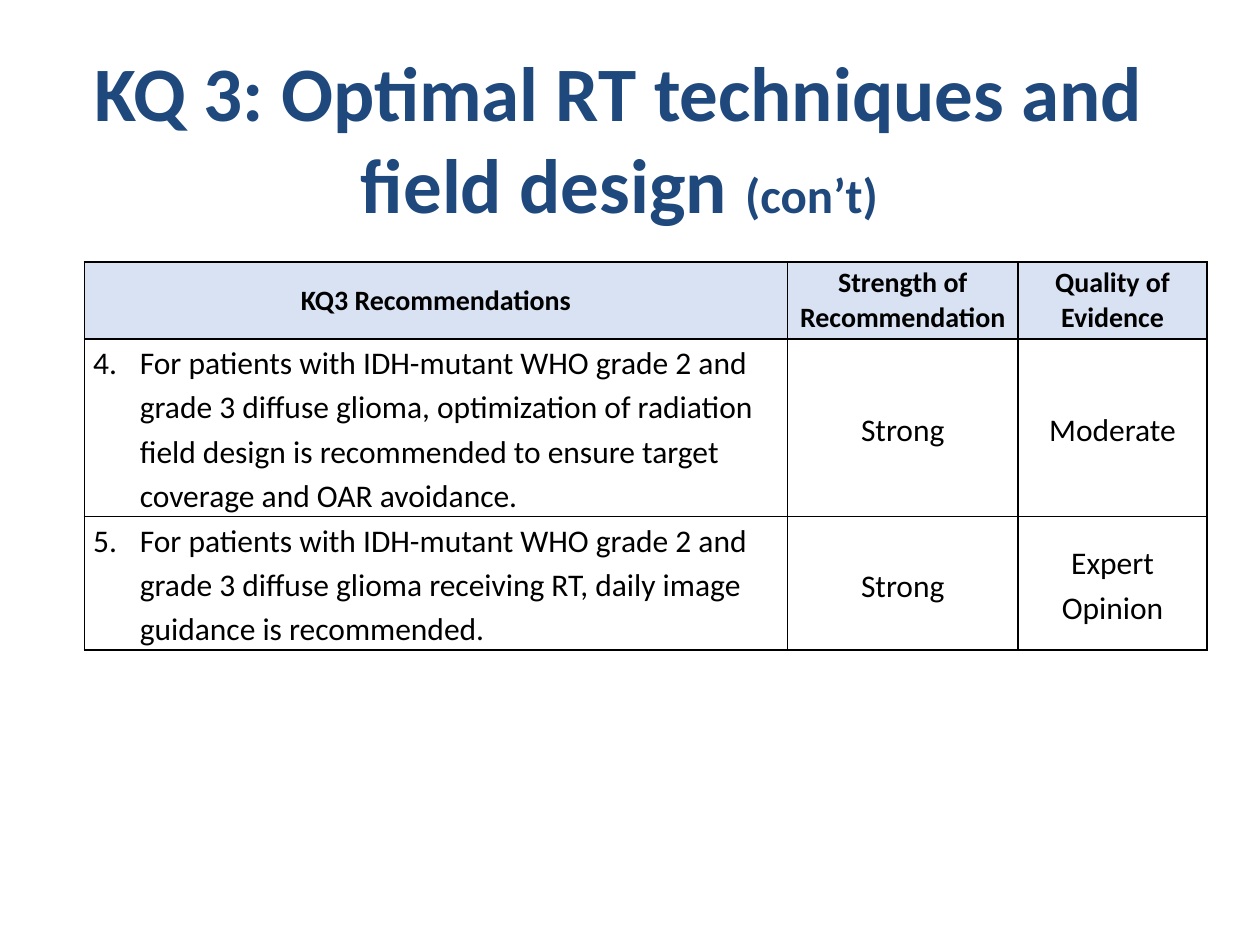
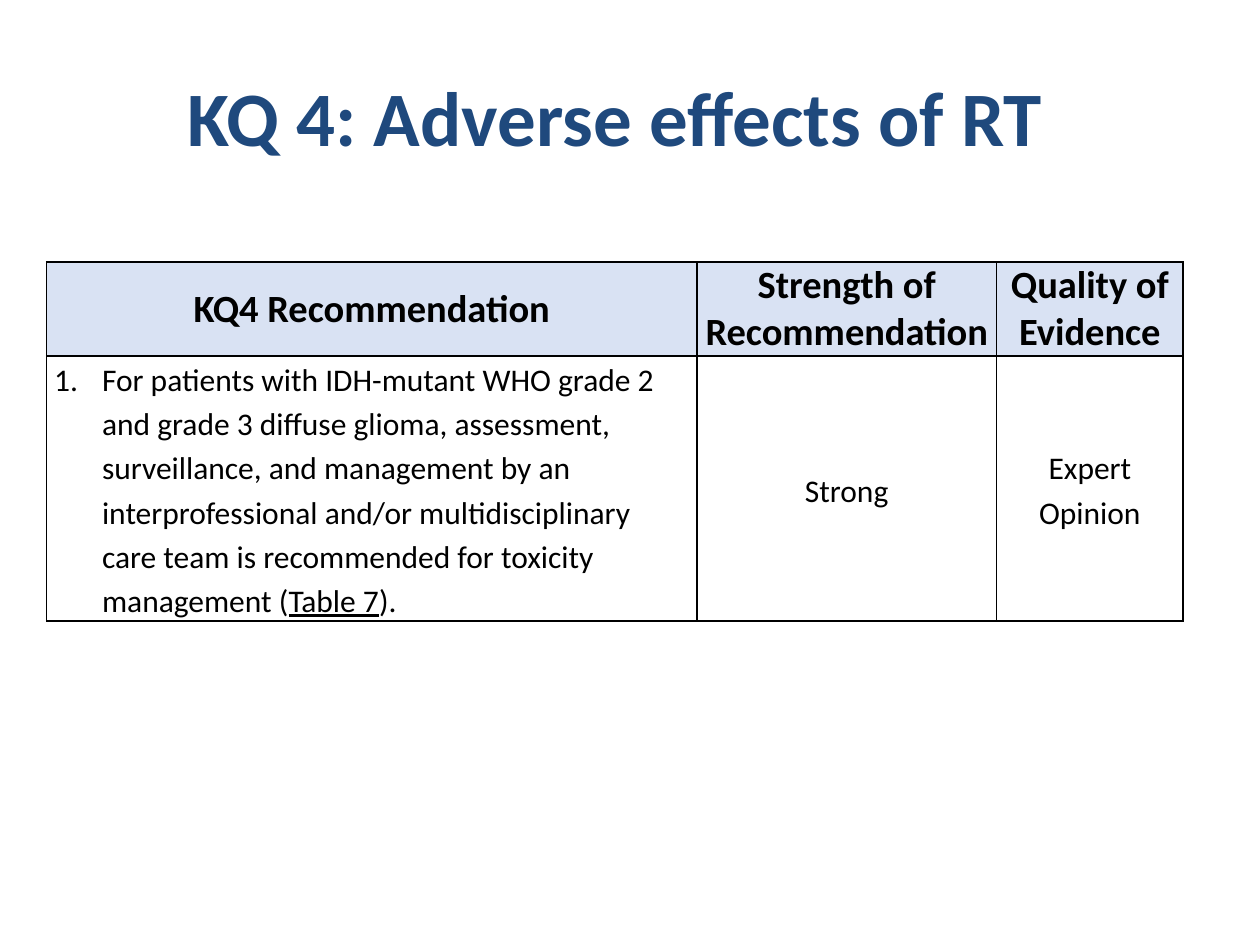
from pptx import Presentation
from pptx.dml.color import RGBColor
from pptx.enum.text import MSO_ANCHOR as Anchor, MSO_AUTO_SIZE as AutoSize, PP_ALIGN as Align
from pptx.oxml.ns import qn
from pptx.util import Inches, Pt
from lxml.etree import SubElement

NAVY = RGBColor(0x1F, 0x49, 0x7D)
BLACK = RGBColor(0x00, 0x00, 0x00)
HEADER_BLUE = RGBColor(0xD9, 0xE2, 0xF3)
FONT = "Calibri"
TABLE_TOP = 2.08
TITLE_WIDTH, TITLE_HEIGHT = 9.17, 1.25

recommendation_slides = [
    dict(
        title="KQ 3: Optimal RT techniques and field design (con’t)",
        title_at=(0.33, 0.3), table_left=0.67, inset=0.07, header_size=16,
        hanging=0.37, first_number=4,
        columns=(5.58, 1.83, 1.5), rows=(0.61, 1.41, 1.06),
        cells=[
            ("KQ3 Recommendations", "Strength of\nRecommendation", "Quality of\nEvidence"),
            ("For patients with IDH-mutant WHO grade 2 and grade 3 diffuse glioma, "
             "optimization of radiation field design is recommended to ensure target "
             "coverage and OAR avoidance.", "Strong", "Moderate"),
            ("For patients with IDH-mutant WHO grade 2 and grade 3 diffuse glioma "
             "receiving RT, daily image guidance is recommended.",
             "Strong", "Expert Opinion"),
        ],
    ),
    dict(
        title="KQ 4: Adverse effects of RT",
        title_at=(0.3, 0.5), table_left=0.37, inset=0.06, header_size=22,
        hanging=0.38, first_number=1,
        columns=(5.16, 2.38, 1.48), rows=(0.74, 2.1),
        cells=[
            ("KQ4 Recommendation", "Strength of Recommendation", "Quality of Evidence"),
            ("For patients with IDH-mutant WHO grade 2 and grade 3 diffuse glioma, "
             "assessment, surveillance, and management by an interprofessional and/or "
             "multidisciplinary care team is recommended for toxicity management (Table 7).",
             "Strong", "Expert Opinion"),
        ],
    ),
]


def add_runs(paragraph, text, marked, size, color, bold):
    for part in filter(None, text.partition(marked)):
        run = paragraph.add_run()
        run.text = part
        run.font.name, run.font.size, run.font.bold = FONT, Pt(size), bold
        run.font.color.rgb = color
    return [run for run in paragraph.runs if run.text == marked]


def format_cell(cell, inset, is_header):
    cell.margin_left = cell.margin_right = Inches(inset)
    cell.margin_top = cell.margin_bottom = 0
    cell.vertical_anchor = Anchor.MIDDLE
    properties = cell._tc.get_or_add_tcPr()
    for edge in ("a:lnL", "a:lnR", "a:lnT", "a:lnB"):
        line = SubElement(properties, qn(edge), w=str(Pt(1)))
        SubElement(SubElement(line, qn("a:solidFill")), qn("a:srgbClr"), val=str(BLACK))
    if is_header:
        cell.fill.solid()
        cell.fill.fore_color.rgb = HEADER_BLUE
    else:
        cell.fill.background()


deck = Presentation()
deck.slide_width, deck.slide_height = Inches(10), Inches(7.5)

for content in recommendation_slides:
    slide = deck.slides.add_slide(deck.slide_layouts[5])
    title = slide.shapes.title
    title.left, title.top = map(Inches, content["title_at"])
    title.width, title.height = Inches(TITLE_WIDTH), Inches(TITLE_HEIGHT)
    title.text_frame.auto_size = AutoSize.NONE
    title.text_frame.vertical_anchor = Anchor.TOP
    heading = title.text_frame.paragraphs[0]
    heading.alignment = Align.CENTER
    for suffix in add_runs(heading, content["title"], "(con’t)", 44, NAVY, True):
        suffix.font.size = Pt(28)

    columns, rows = content["columns"], content["rows"]
    recommendations = slide.shapes.add_table(
        len(rows), len(columns), Inches(content["table_left"]), Inches(TABLE_TOP),
        Inches(sum(columns)), Inches(sum(rows))).table
    recommendations.horz_banding = False
    for column, width in zip(recommendations.columns, columns):
        column.width = Inches(width)
    for row, height in zip(recommendations.rows, rows):
        row.height = Inches(height)

    for row_index, row_texts in enumerate(content["cells"]):
        is_header = row_index == 0
        for column_index, text in enumerate(row_texts):
            cell = recommendations.cell(row_index, column_index)
            format_cell(cell, content["inset"], is_header)
            cell.text_frame.text = "\n" * text.count("\n")
            for paragraph, line_text in zip(cell.text_frame.paragraphs, text.split("\n")):
                paragraph.alignment = Align.CENTER
                if not is_header:
                    paragraph.line_spacing = 1.15
                    if column_index == 0:
                        cell.vertical_anchor = Anchor.TOP
                        paragraph.alignment = Align.LEFT
                        settings = paragraph._p.get_or_add_pPr()
                        settings.set("marL", str(Inches(content["hanging"])))
                        settings.set("indent", str(-Inches(content["hanging"])))
                        SubElement(settings, qn("a:buFont"), typeface=FONT)
                        SubElement(settings, qn("a:buAutoNum"), type="arabicPeriod",
                                   startAt=str(content["first_number"] + row_index - 1))
                size = content["header_size"] if is_header else 18
                for reference in add_runs(paragraph, line_text, "Table 7", size, BLACK, is_header):
                    reference.font.underline = True

deck.save("out.pptx")
